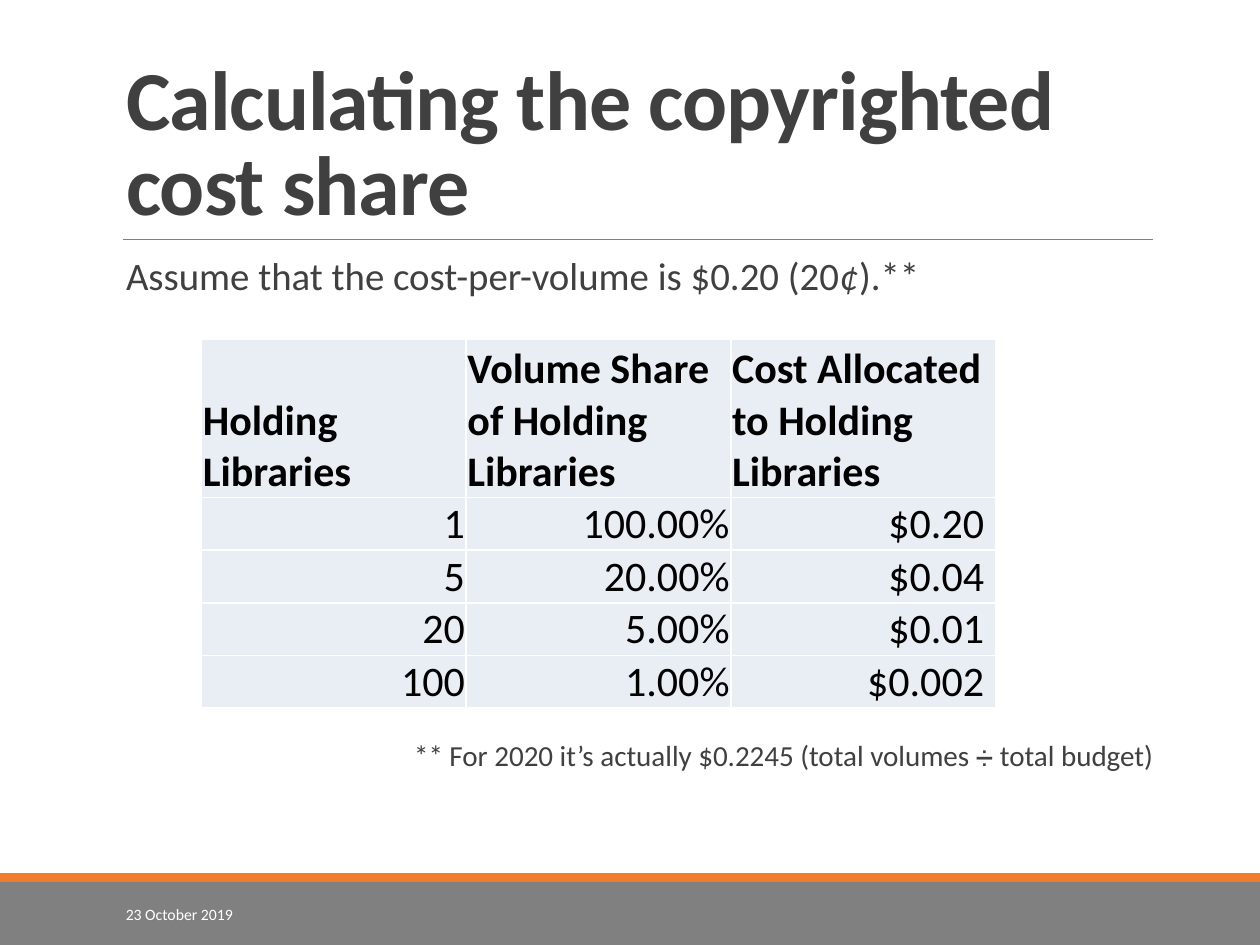
import pptx
import pptx.util
import pptx.dml.color
import pptx.enum.text
import pptx.enum.shapes
import pptx.oxml
import pptx.oxml.ns
from lxml import etree

theme = {
    "font": "Calibri",
    "text": "404040", "table_text": "000000", "cell": "E9EDF4", "white": "FFFFFF",
    "grey": "808080", "orange": "EF7C2F",
    "title_size": 48, "body_size": 22.2, "note_size": 16.6, "sign_size": 12.9,
    "table_size": 24, "date_size": 9,
}
color = pptx.dml.color.RGBColor.from_string
inches = pptx.util.Inches
points = pptx.util.Pt
align = pptx.enum.text.PP_ALIGN
anchor = pptx.enum.text.MSO_ANCHOR


def style(paragraph, size, text_color, bold=False, alignment=align.LEFT):
    paragraph.alignment = alignment
    font = paragraph.font
    font.name = theme["font"]
    font.size = points(size)
    font.bold = bold
    font.color.rgb = color(text_color)


def place(shape, left, top, width, height):
    shape.left, shape.top = inches(left), inches(top)
    shape.width, shape.height = inches(width), inches(height)


presentation = pptx.Presentation()
presentation.slide_width, presentation.slide_height = inches(10), inches(7.5)
slide = presentation.slides.add_slide(presentation.slide_layouts[1])
left, width = 0.9, 8.25

for top, height, fill in [(7, 0.5, theme["grey"]), (6.93, 0.07, theme["orange"])]:
    band = slide.shapes.add_shape(
        pptx.enum.shapes.MSO_SHAPE.RECTANGLE, 0, inches(top), presentation.slide_width, inches(height))
    band.shadow.inherit = False
    band.fill.solid()
    band.fill.fore_color.rgb = color(fill)
    band.line.fill.background()

rule = slide.shapes.add_connector(
    pptx.enum.shapes.MSO_CONNECTOR.STRAIGHT, inches(0.98), inches(1.9), inches(left + width), inches(1.9))
rule.line.color.rgb = color(theme["grey"])
rule.line.width = points(0.5)
etree.SubElement(rule._element.spPr, pptx.oxml.ns.qn("a:effectLst"))

title = slide.shapes.title
place(title, left, 0.31, width, 1.59)
title.text_frame.text = "Calculating the copyrighted cost share"
title.text_frame.auto_size = pptx.enum.text.MSO_AUTO_SIZE.NONE
title.text_frame.vertical_anchor = anchor.BOTTOM
paragraph = title.text_frame.paragraphs[0]
style(paragraph, theme["title_size"], theme["text"], bold=True)
paragraph.line_spacing = 0.85
paragraph.runs[0].font._element.set("spc", "-50")

body = slide.placeholders[1]
place(body, left, 2.02, width, 4.4)
frame = body.text_frame
frame.auto_size = pptx.enum.text.MSO_AUTO_SIZE.NONE
frame.margin_left = frame.margin_right = 0
body_lines = [
    (["Assume that the cost-per-volume is $0.20 (20", "¢", ").**"], theme["body_size"], align.LEFT, 0),
    (["** For 2020 it’s actually $0.2245 (total volumes ", "➗", " total budget)"],
     theme["note_size"], align.RIGHT, 253),
]
for index, (texts, size, alignment, space_before) in enumerate(body_lines):
    paragraph = frame.paragraphs[0] if index == 0 else frame.add_paragraph()
    properties = paragraph._p.get_or_add_pPr()
    properties.set("marL", str(inches(0.1)))
    properties.set("indent", "0")
    etree.SubElement(properties, pptx.oxml.ns.qn("a:buNone"))
    style(paragraph, size, theme["text"], alignment=alignment)
    paragraph.line_spacing = 0.8
    paragraph.space_before = points(space_before)
    paragraph.space_after = points(2)
    for text in texts:
        paragraph.add_run().text = text
frame.paragraphs[0].runs[1].font.italic = True
frame.paragraphs[1].runs[1].font.size = points(theme["sign_size"])

rows = [
    ["Holding Libraries", "Volume Share of Holding Libraries", "Cost Allocated to Holding Libraries"],
    ["1", "100.00%", "$0.20"],
    ["5", "20.00%", "$0.04"],
    ["20", "5.00%", "$0.01"],
    ["100", "1.00%", "$0.002"],
]
table = slide.shapes.add_table(
    len(rows), len(rows[0]), inches(1.6), inches(2.69), inches(6.3), inches(2.9)).table
for column in table.columns:
    column.width = inches(2.1)
for row_index, texts in enumerate(rows):
    header = row_index == 0
    table.rows[row_index].height = inches(1.26 if header else 0.41)
    for column_index, text in enumerate(texts):
        cell = table.cell(row_index, column_index)
        cell.text = text
        cell.vertical_anchor = anchor.BOTTOM
        cell.margin_left = cell.margin_top = inches(0.01)
        cell.margin_right = inches(0.09 if column_index == 2 and not header else 0.01)
        cell.margin_bottom = 0
        style(cell.text_frame.paragraphs[0], theme["table_size"], theme["table_text"],
              bold=header, alignment=align.LEFT if header else align.RIGHT)
        properties = cell._tc.get_or_add_tcPr()
        for side in ["lnL", "lnR", "lnT", "lnB"]:
            border = etree.SubElement(properties, pptx.oxml.ns.qn(f"a:{side}"), w=str(points(1)))
            fill = etree.SubElement(border, pptx.oxml.ns.qn("a:solidFill"))
            etree.SubElement(fill, pptx.oxml.ns.qn("a:srgbClr"), val=theme["white"])
        cell.fill.solid()
        cell.fill.fore_color.rgb = color(theme["cell"])

date = slide.shapes.add_textbox(inches(left), inches(7.06), inches(2.03), inches(0.4))
date.text_frame.word_wrap = True
date.text_frame.vertical_anchor = anchor.MIDDLE
date.text_frame.text = "23 October 2019"
style(date.text_frame.paragraphs[0], theme["date_size"], theme["white"])

presentation.save("out.pptx")
